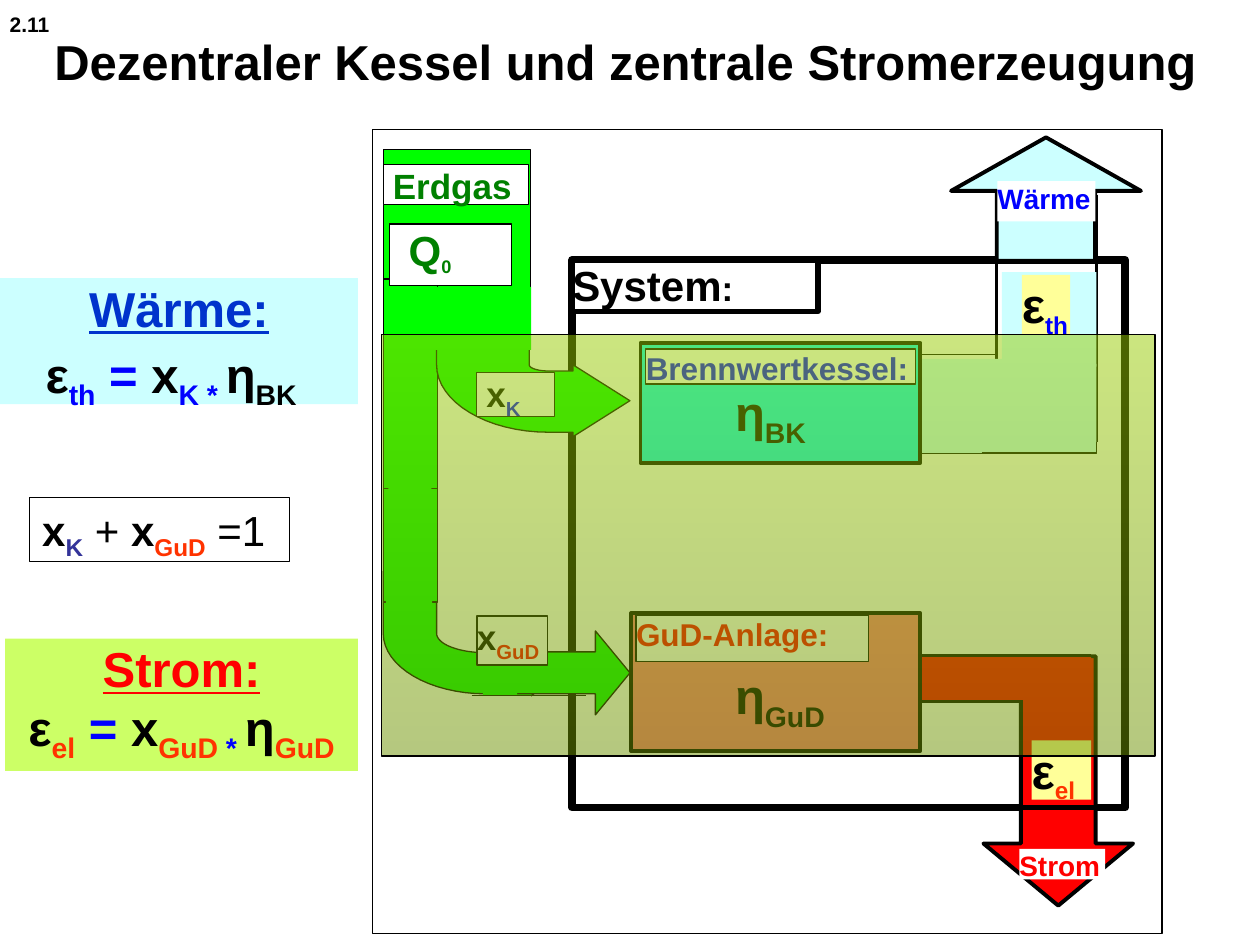
from dataclasses import dataclass

from lxml.etree import SubElement
from pptx import Presentation
from pptx.dml.color import RGBColor
from pptx.enum.shapes import MSO_CONNECTOR as CONN, MSO_SHAPE as SHAPE
from pptx.enum.text import MSO_ANCHOR as ANCHOR, PP_ALIGN as ALIGN
from pptx.oxml.ns import qn
from pptx.util import Pt


@dataclass(frozen=True)
class Theme:
    font: str = "Arial"
    # colours
    black: str = "000000"
    white: str = "FFFFFF"
    gas: str = "00FF00"
    gas_text: str = "008000"
    heat: str = "CCFFFF"
    heat_title: str = "0033CC"
    blue: str = "0000FF"
    indigo: str = "333399"
    power: str = "FF0000"
    power_bg: str = "CCFF66"
    orange: str = "FF3300"
    boiler: str = "00FFFF"
    plant: str = "FF7C80"
    efficiency: str = "FFFF99"
    veil: tuple = ("99CC00", "6D9200")
    # type sizes
    tiny: int = 12
    small: int = 16
    label: int = 18
    mid: int = 20
    big: int = 24
    head: int = 28
    space: int = 32


T = Theme()


def rgb(c):
    return RGBColor.from_string(c)


def run(text, size, color=T.black, sub=False, bold=True, under=False):
    return text, size, color, sub, bold, under


def sub(text, size, color=T.black):
    return run(text, size, color, sub=True)


def write(sp, paras, inset=(0, 0), align=ALIGN.LEFT, wrap=True):
    tf = sp.text_frame
    tf.word_wrap, tf.vertical_anchor = wrap, ANCHOR.TOP
    tf.margin_left, tf.margin_top = Pt(inset[0]), Pt(inset[1])
    tf.margin_right = tf.margin_bottom = 0
    for i, runs in enumerate(paras):
        p = tf.add_paragraph() if i else tf.paragraphs[0]
        p.alignment = align
        for text, size, color, lowered, bold, under in runs:
            r = p.add_run()
            r.text = text
            f = r.font
            f.name, f.size, f.bold, f.underline = T.font, Pt(size), bold, under
            f.color.rgb = rgb(color)
            if lowered:
                f._element.set("baseline", "-25000")


def paint(sp, fill=None, line=0):
    sp.shadow.inherit = False
    if fill:
        sp.fill.solid()
        sp.fill.fore_color.rgb = rgb(fill)
    else:
        sp.fill.background()
    if line:
        sp.line.color.rgb = rgb(T.black)
        sp.line.width = Pt(line)
    else:
        sp.line.fill.background()
    return sp


def shape(s, x, y, w, h, fill=None, line=0, kind=SHAPE.RECTANGLE, adj=()):
    sp = s.shapes.add_shape(kind, Pt(x), Pt(y), Pt(w), Pt(h))
    for i, value in enumerate(adj):
        sp.adjustments[i] = value
    return paint(sp, fill, line)


def label(s, x, y, w, h, runs, fill=T.white, line=0, indent=0):
    write(shape(s, x, y, w, h, fill, line), [runs], (indent, 0))


def text(s, x, y, w, h, runs):
    write(s.shapes.add_textbox(Pt(x), Pt(y), Pt(w), Pt(h)), [runs], wrap=False)


def line(s, x1, y1, x2, y2, width):
    c = s.shapes.add_connector(CONN.STRAIGHT, Pt(x1), Pt(y1), Pt(x2), Pt(y2))
    c.line.color.rgb = rgb(T.black)
    c.line.width = Pt(width)
    SubElement(c._element.spPr, qn("a:effectLst"))


def quarter(x1, y1, x2, y2, horizontal, steps=16):
    """Points of a quarter ellipse, leaving horizontally or vertically."""
    k = 0.55
    if horizontal:
        a, b = (x1 + k * (x2 - x1), y1), (x2, y2 + k * (y1 - y2))
    else:
        a, b = (x1, y1 + k * (y2 - y1)), (x2 + k * (x1 - x2), y2)
    for i in range(1, steps + 1):
        t, u = i / steps, 1 - i / steps
        yield tuple(u**3 * p + 3 * u * u * t * q + 3 * u * t * t * m + t**3 * n
                    for p, q, m, n in zip((x1, y1), a, b, (x2, y2)))


def bend_arrow(s, x0, top, x1, turn, xc, base, tip, shaft, head):
    """Arrow running down between x0 and x1, then right to tip."""
    (inner, outer), (high, low) = shaft, head
    pts = [(base, low), (base, outer), (xc, outer),
           *quarter(xc, outer, x0, turn, True), (x0, top), (x1, top), (x1, turn),
           *quarter(x1, turn, xc, inner, False), (base, inner), (base, high)]
    fb = s.shapes.build_freeform(Pt(tip), Pt((high + low) / 2))
    fb.add_line_segments([(Pt(px), Pt(py)) for px, py in pts], close=True)
    paint(fb.convert_to_shape(), T.gas, 0.75)


def system_border(s, x, y, w, h):
    shape(s, x, y, w, h, T.white, 4.5)
    label(s, x, y, 140.5, 29.5, [run("System", T.big), run(":", T.mid)], line=3)


def power_path(s, x, y):
    line(s, x - 22, y + 25.5, x + 86, y + 25.5, 3)
    shape(s, x + 64, y, 85.5, 142.5, T.power, 2.25, SHAPE.DOWN_ARROW, (0.5, 0.415))
    line(s, x + 17.5, y, x + 125.5, y, 3)
    shape(s, x, y + 0.5, 125.5, 24.5, T.power)
    line(s, x + 85, y + 86.5, x + 129.5, y + 86.5, 3)
    label(s, x + 84.5, y + 110, 49, 17.5, [run("Strom", T.small, T.power)])
    label(s, x + 91.5, y + 48, 34, 34,
          [run("ε", T.head), sub("el", T.big, T.orange)], T.efficiency)


def heat_path(s, x, y):
    line(s, x + 83, y + 33, x + 83, y + 174, 1.5)
    line(s, x + 26, y + 30, x + 26, y + 126.5, 1.5)
    shape(s, x - 45.5, y + 149, 128.5, 31.5, T.heat, 0.75)
    shape(s, x + 45.5, y + 129.5, 37.5, 44.5, T.heat)
    shape(s, x - 131, y + 126.5, 182, 23, T.heat)
    shape(s, x, y, 108.5, 70.5, T.heat, 2.25, SHAPE.UP_ARROW, (0.518, 0.434))
    line(s, x + 26, y + 124, x - 45.5, y + 124, 0.75)
    label(s, x + 26.5, y + 25, 56, 23, [run("Wärme", T.small, T.blue)])
    shape(s, x + 29, y + 77, 54, 54, T.heat)
    label(s, x + 40.5, y + 78.5, 27.5, 34,
          [run("ε", T.head), sub("th", T.big, T.blue)], T.efficiency)
    line(s, x + 17.5, y + 180, x + 83, y + 180, 0.75)


def converter(s, x, y, w, h, fill, title, title_box, index, eta_y):
    shape(s, x, y, w, h, fill, 2.25)
    dx, dy, tw, th = title_box
    label(s, x + dx, y + dy, tw, th, [title], line=0.75)
    text(s, 420, y + eta_y, 65, 38, [run("η", T.head), sub(index, T.head),
                                     run(" ", T.space, bold=False)])


def gas_path(s, x, y):
    # arrow to the plant and supply pipe
    bend_arrow(s, x, y + 241, x + 30.5, y + 276.5, x + 58.5, x + 71.5, x + 101.5,
               (y + 287.5, y + 311), (y + 276.5, y + 322))
    for dx, dy, w, h in ((0, 0, 84, 113), (0, 184.5, 31, 74), (0, 74, 31, 119.5)):
        shape(s, x + dx, y + dy, w, h, T.gas, 0.75)
    # arrow to the boiler
    bend_arrow(s, x + 30.5, y + 90.5, x + 83.5, y + 123, x + 94.5, x + 108.5,
               x + 141, (y + 126.5, y + 161.5), (y + 123, y + 164))
    shape(s, x + 62, y + 275, 79, 48, T.gas, 0.75, SHAPE.RIGHT_ARROW, (0.5, 0.412))
    # patches that hide the seams
    for dx, dy, w, h, fill in ((50.5, 275, 26.5, 11, T.white),
                               (57, 294, 19.5, 18, T.gas),
                               (3, 186.5, 24.5, 36, T.gas),
                               (21, 78.5, 63.5, 36, T.gas),
                               (1.5, 252.5, 26.5, 11.5, T.gas),
                               (62, 312, 22.5, 11.5, T.white)):
        shape(s, x + dx, y + dy, w, h, fill)
    line(s, x + 50.5, y + 312, x + 116, y + 312, 1)
    # labels
    for dx, dy, w, h, indent, runs in (
            (0, 8.5, 83, 23, 5.5, [run("Erdgas", T.mid, T.gas_text)]),
            (3.5, 42.5, 70, 35, 11, [run("Q", T.big, T.gas_text),
                                     sub("0", T.label, T.gas_text)]),
            (53.5, 127.5, 44.5, 25, 5.5, [run("x", T.mid), sub("K", T.mid, T.blue)]),
            (53.5, 266.5, 40.5, 28, 0, [run("x", T.mid), sub("GuD", T.mid, T.power)])):
        label(s, x + dx, y + dy, w, h, runs, line=0.75, indent=indent)


def veil(s, x, y, w, h):
    sp = shape(s, x, y, w, h, line=0.75)
    sp.fill.gradient()
    sp.fill.gradient_angle = 270
    for stop, color in zip(sp.fill.gradient_stops, T.veil):
        stop.color.rgb = rgb(color)
    for clr in sp._element.spPr.find(qn("a:gradFill")).iter(qn("a:srgbClr")):
        SubElement(clr, qn("a:alpha"), val="50000")


def formula(s, x, y, w, h, fill, title, color, terms):
    heading = run(title, T.head, color, under=True)
    write(shape(s, x, y, w, h, fill), [[heading], terms], align=ALIGN.CENTER)


def main():
    prs = Presentation()
    prs.slide_width, prs.slide_height = Pt(720), Pt(540)
    s = prs.slides.add_slide(prs.slide_layouts[6])
    # energy flow diagram
    system_border(s, 327, 148.5, 316, 313)
    shape(s, 213, 74, 451, 459.5, line=0.75)
    power_path(s, 498, 375)
    heat_path(s, 543.5, 78.5)
    converter(s, 366, 196, 160, 68.5, T.boiler,
              run("Brennwertkessel:", T.label, T.blue), (3, 3.5, 154, 20), "BK", 18.5)
    converter(s, 360.5, 350.5, 165.5, 78.5, T.plant,
              run("GuD-Anlage:", T.label, T.power), (3, 1, 133, 26.5), "GuD", 26)
    gas_path(s, 219, 85.5)
    veil(s, 218, 191, 442, 241)
    # formulas
    formula(s, 0, 159, 204.5, 72, T.heat, "Wärme:", T.heat_title,
            [run("ε", T.head), sub("th", T.head, T.blue), run(" = ", T.head, T.blue),
             run("x", T.head), sub("K * ", T.head, T.blue), run("η", T.head),
             sub("BK", T.head), run(" ", T.space, bold=False)])
    formula(s, 3, 365, 201.5, 75.5, T.power_bg, "Strom:", T.power,
            [run("ε", T.head), sub("el", T.head, T.orange), run(" = ", T.head, T.blue),
             run("x", T.head), sub("GuD", T.head, T.orange), sub(" * ", T.head, T.blue),
             run("η", T.head), sub("GuD", T.head, T.orange)])
    write(shape(s, 17, 284.5, 148.5, 36.5, line=0.75),
          [[run("x", T.big), sub("K", T.big, T.indigo), run(" + ", T.big, bold=False),
            run("x", T.big), sub("GuD", T.big, T.orange),
            run(" =1", T.big, bold=False)]], (7.2, 3.6))
    # title and slide number
    text(s, 31, 18, 654.5, 34,
         [run("Dezentraler Kessel und zentrale Stromerzeugung", T.head)])
    text(s, 5.5, 6.5, 23, 14.5, [run("2.11", T.tiny)])
    prs.save("out.pptx")


if __name__ == "__main__":
    main()
